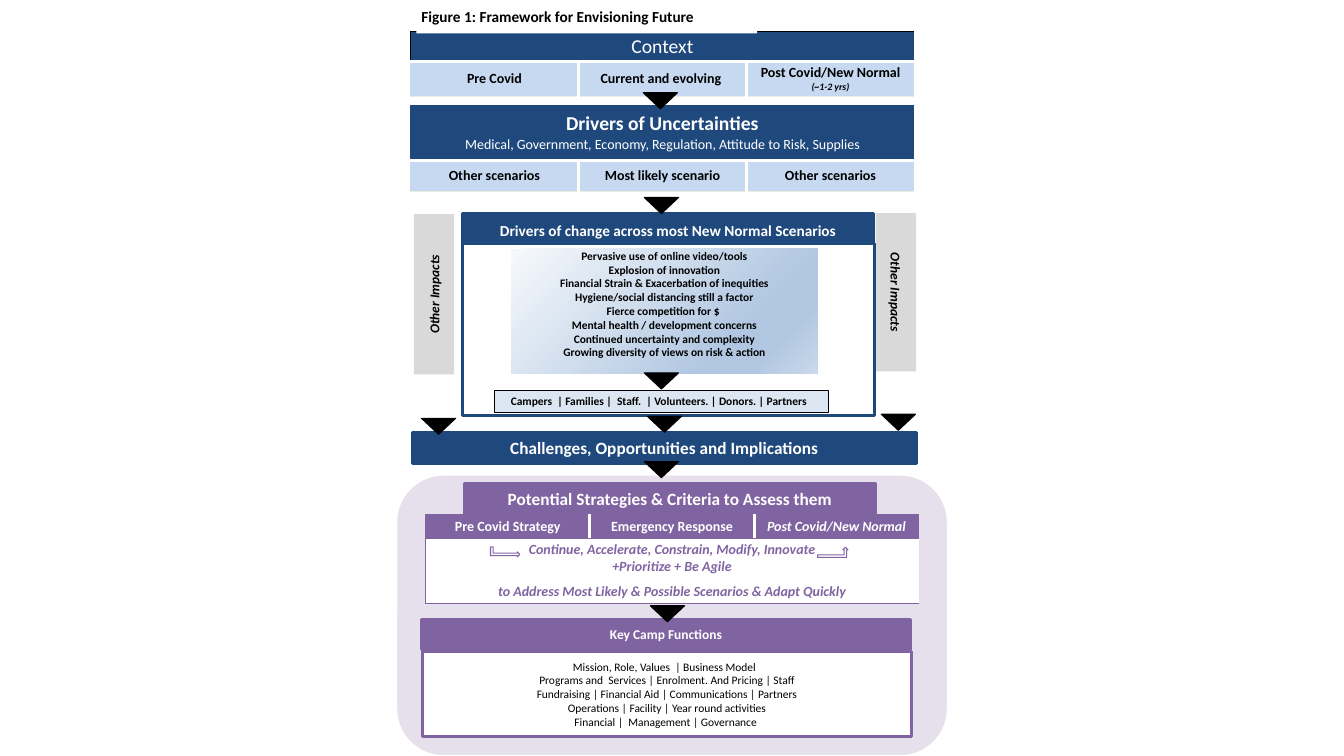
"""Build the slide showing a framework for envisioning the future of camps."""
from lxml import etree
from pptx import Presentation
from pptx.dml.color import RGBColor
from pptx.enum.shapes import MSO_SHAPE as Preset
from pptx.enum.text import MSO_ANCHOR as Anchor, MSO_AUTO_SIZE as AutoSize, PP_ALIGN as Align
from pptx.oxml import parse_xml
from pptx.util import Inches, Pt

NAVY, SKY, PURPLE, WHITE, BLACK = "1F497D", "C6D9F1", "8064A2", "FFFFFF", "000000"
DRAWING = "http://schemas.openxmlformats.org/drawingml/2006/main"
PLAIN_TABLE = "{2D5ABB26-0587-4C30-8999-92F81FD0307C}"
color = RGBColor.from_string


def write(frame, lines, ink, align=Align.CENTER):
    """Fill a text frame with (text, size, style) lines; b is bold, i is italic."""
    frame.word_wrap = True
    for index, (text, size, style) in enumerate(lines):
        para = frame.paragraphs[0] if index == 0 else frame.add_paragraph()
        para.text = text
        para.alignment = align
        para.font.name, para.font.size = "Calibri", Pt(size)
        para.font.bold, para.font.italic = "b" in style, "i" in style
        para.font.color.rgb = color(ink)


def add_box(place, fill, line=None, width=0.75, lines=(), ink=BLACK,
            preset=Preset.RECTANGLE, rotation=0, inset=0.05):
    """Add a preset shape with its fill, outline and text."""
    box = page.shapes.add_shape(preset, *map(Inches, place))
    box.shadow.inherit = False
    box.rotation = rotation
    box.fill.solid()
    box.fill.fore_color.rgb = color(fill)
    if line:
        box.line.color.rgb = color(line)
        box.line.width = Pt(width)
    else:
        box.line.fill.background()
    frame = box.text_frame
    frame.margin_left = frame.margin_right = frame.margin_top = frame.margin_bottom = Inches(inset)
    frame.vertical_anchor = Anchor.MIDDLE
    write(frame, lines, ink)
    return box


deck = Presentation()
deck.slide_width, deck.slide_height = Inches(13.33), Inches(7.5)
page = deck.slides.add_slide(deck.slide_layouts[5])

add_box((3.94, 4.72, 5.45, 2.77), "E6E0EC", preset=Preset.ROUNDED_RECTANGLE)
for place, rotation in (((8.1, 2.7, 1.57, 0.4), 90), ((3.51, 2.72, 1.59, 0.4), 270)):
    add_box(place, "D9D9D9", lines=[("Other Impacts", 9.6, "bi")], rotation=rotation)

headings = [
    ((4.59, 2.12, 4.07, 0.33), NAVY, 2.25, "Drivers of change across most New Normal Scenarios", 10.9),
    ((4.61, 4.8, 4.07, 0.29), PURPLE, 3, "Potential Strategies & Criteria to Assess them", 12.3),
    ((4.18, 6.15, 4.85, 0.29), PURPLE, 2.25, "Key Camp Functions", 9.6),
    ((4.09, 4.29, 5, 0.31), NAVY, 2.25, "Challenges, Opportunities and Implications", 12.3),
]
for place, fill, width, text, size in headings:
    add_box(place, fill, fill, width, [(text, size, "b")], WHITE)

functions = [
    "Mission, Role, Values  | Business Model  ",
    "Programs and  Services | Enrolment. And Pricing | Staff",
    "Fundraising | Financial Aid | Communications | Partners",
    " Operations | Facility | Year round activities ",
    "Financial |  Management | Governance ",
]
add_box((4.59, 2.42, 4.08, 1.7), WHITE, NAVY, 2.25)
add_box((4.19, 6.46, 4.85, 0.85), WHITE, PURPLE, 2.25, [(text, 8.2, "") for text in functions])

context = [
    [[("Context", 14, "")]],
    [[("Pre Covid", 10, "b")], [("Current and evolving ", 10, "b")],
     [("Post Covid/New Normal", 10, "b"), ("(~1-2 yrs)", 7, "bi")]],
]
uncertainties = [
    [[("Drivers of Uncertainties", 14, "b"),
      ("Medical, Government, Economy, Regulation, Attitude to Risk, Supplies", 10, "")]],
    [[(text, 10, "b")] for text in ("Other scenarios", "Most likely scenario", "Other scenarios")],
]
strategies = [
    [[("Pre Covid Strategy", 10, "b")], [("Emergency Response", 10, "b")],
     [("Post Covid/New Normal", 10, "bi")]],
    [[("Continue, Accelerate, Constrain, Modify, Innovate", 10, "bi"),
      ("+Prioritize + Be Agile", 10, "bi"),
      ("to Address Most Likely & Possible Scenarios & Adapt Quickly", 10, "bi")]],
]
blue_rows = [(NAVY, WHITE), (SKY, BLACK)]
purple_rows = [(PURPLE, WHITE), (WHITE, PURPLE)]
divider = (WHITE, 2.25)
pale, violet = ("EEECE1", 1), (PURPLE, 1)
tables = [
    ((4.07, 0.31, 5), (0.3, 0.34), context, blue_rows, [(BLACK, 0.75), None], divider, pale),
    ((4.07, 1.04, 5), (0.55, 0.31), uncertainties, blue_rows, [None, None], divider, pale),
    ((4.22, 5.11, 4.89), (0.23, 0.64), strategies, purple_rows, [violet, violet], violet, violet),
]
for (left, top, width), heights, rows, looks, edges, middle, bottom in tables:
    holder = page.shapes.add_table(2, 3, Inches(left), Inches(top), Inches(width), Inches(sum(heights)))
    table = holder.table
    table.first_row = table.horz_banding = False
    table._tbl.tblPr.find(f"{{{DRAWING}}}tableStyleId").text = PLAIN_TABLE
    for y, (height, texts, (fill, ink), edge) in enumerate(zip(heights, rows, looks, edges)):
        table.rows[y].height = Inches(height)
        merged = len(texts) == 1
        if merged:
            table.cell(y, 0).merge(table.cell(y, 2))
        for x in range(3):
            cell = table.cell(y, x)
            cell.margin_left = cell.margin_right = Inches(0.07)
            cell.margin_top = cell.margin_bottom = Inches(0.03)
            cell.vertical_anchor = Anchor.MIDDLE
            cell.fill.solid()
            cell.fill.fore_color.rgb = color(fill)
            if x < len(texts):
                write(cell.text_frame, texts[x], ink)
            inner = None if merged else divider
            borders = {
                "lnL": edge if x == 0 else inner,
                "lnR": edge if x == 2 else inner,
                "lnT": edge if y == 0 else middle,
                "lnB": middle if y == 0 else bottom,
            }
            properties = cell._tc.get_or_add_tcPr()
            for index, (side, border) in enumerate(borders.items()):
                stroke = etree.Element(f"{{{DRAWING}}}{side}")
                if border:
                    stroke.set("w", str(int(Pt(border[1]))))
                    paint = etree.SubElement(stroke, f"{{{DRAWING}}}solidFill")
                    etree.SubElement(paint, f"{{{DRAWING}}}srgbClr", val=border[0])
                else:
                    etree.SubElement(stroke, f"{{{DRAWING}}}noFill")
                properties.insert(index, stroke)
table.cell(1, 0).text_frame.paragraphs[2].space_before = Pt(6)

title = page.shapes.title
title.left, title.top, title.width, title.height = map(Inches, (4.13, -0.01, 3.38, 0.34))
title.fill.solid()
title.fill.fore_color.rgb = color(WHITE)
frame = title.text_frame
frame.auto_size = AutoSize.NONE
frame.margin_left = frame.margin_right = frame.margin_top = frame.margin_bottom = Inches(0.05)
frame.vertical_anchor = Anchor.MIDDLE
write(frame, [("Figure 1: Framework for Envisioning Future", 10.9, "b")], BLACK, Align.LEFT)
page.shapes._spTree.append(title._element)

for place, rotation in (((4.96, 5.33, 0.1, 0.29), 90), ((8.11, 5.43, 0.3, 0.1), 0)):
    add_box(place, WHITE, PURPLE, preset=Preset.BENT_UP_ARROW, rotation=rotation)

groups = "Campers  | Families |  Staff.  | Volunteers. | Donors. | Partners  "
add_box((4.9, 3.87, 3.32, 0.22), "DCE6F2", BLACK, lines=[(groups, 8.2, "b")])

changes = [
    "Pervasive use of online video/tools",
    "Explosion of innovation",
    "Financial Strain & Exacerbation of inequities",
    "Hygiene/social distancing still a factor",
    "Fierce competition for $ ",
    "Mental health / development concerns",
    "Continued uncertainty and complexity",
    "Growing diversity of views on risk & action",
]
drivers = add_box((5.07, 2.47, 3.04, 1.24), SKY, lines=[(text, 8.2, "b") for text in changes], inset=0)
drivers.text_frame.vertical_anchor = Anchor.TOP
stops = "".join(
    f'<a:gs pos="{percent * 1000}"><a:srgbClr val="{shade}"/></a:gs>'
    for percent, shade in ((0, "F6F9FC"), (74, "B0C6E1"), (83, "B0C6E1"), (100, "CAD9EB")))
gradient = parse_xml(f'<a:gradFill xmlns:a="{DRAWING}"><a:gsLst>{stops}</a:gsLst>'
                     '<a:lin ang="2700000" scaled="0"/></a:gradFill>')
solid = drivers._element.spPr.find(f"{{{DRAWING}}}solidFill")
solid.getparent().replace(solid, gradient)

arrows = [(6.38, 0.92), (6.39, 1.96), (6.39, 3.7), (4.18, 4.15), (6.42, 4.13),
          (8.74, 4.11), (6.39, 4.58), (6.45, 6.01)]
for left, top in arrows:
    add_box((left, top, 0.34, 0.16), BLACK, BLACK, preset=Preset.FLOWCHART_MERGE)

deck.save("out.pptx")
